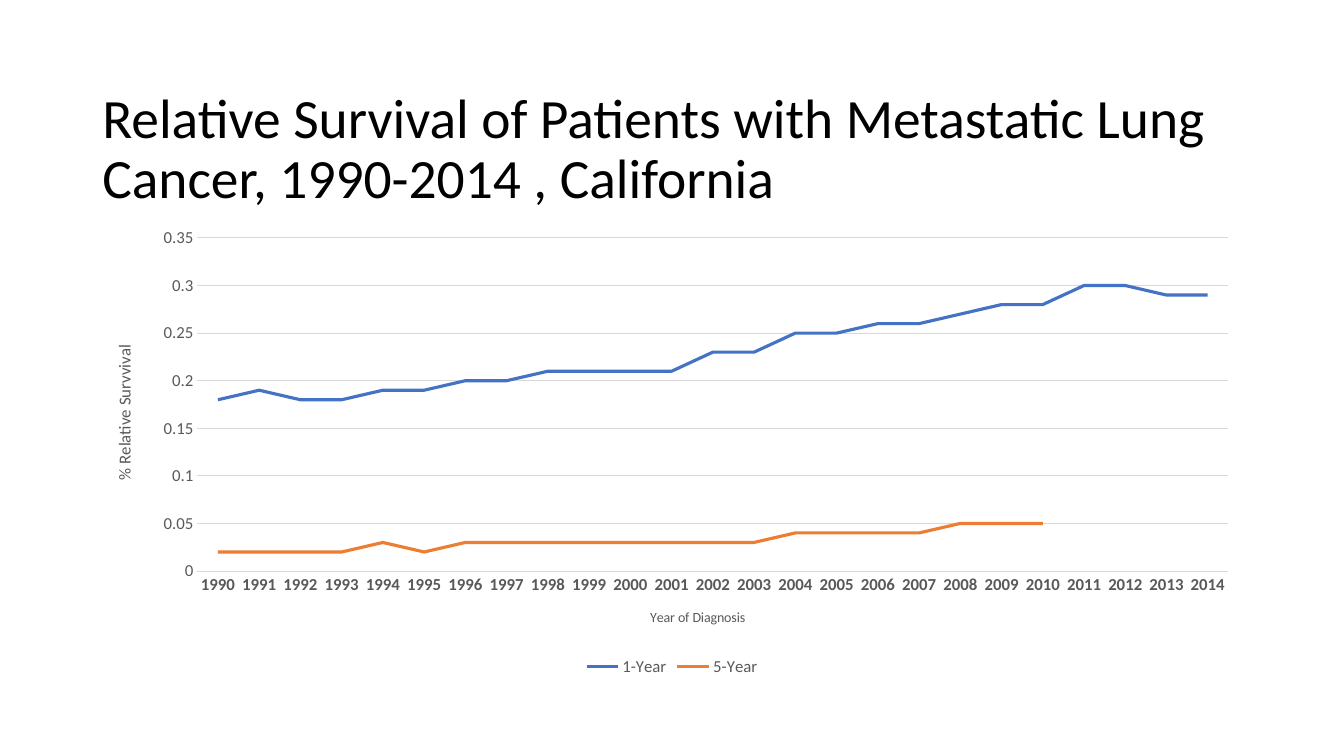
from lxml.etree import Element, SubElement
from pptx import Presentation
from pptx.chart.data import CategoryChartData
from pptx.dml.color import RGBColor
from pptx.enum.chart import XL_CHART_TYPE, XL_LEGEND_POSITION, XL_TICK_MARK
from pptx.enum.text import MSO_ANCHOR
from pptx.oxml.ns import qn
from pptx.util import Inches, Pt

COLORS = {
    "title": "000000",
    "label": "595959",
    "grid": "D9D9D9",
    "1-Year": "4472C4",
    "5-Year": "ED7D31",
}
YEARS = [str(year) for year in range(1990, 2015)]
SURVIVAL = {
    "1-Year": [0.18, 0.19, 0.18, 0.18, 0.19, 0.19, 0.2, 0.2, 0.21,
               0.21, 0.21, 0.21, 0.23, 0.23, 0.25, 0.25, 0.26, 0.26,
               0.27, 0.28, 0.28, 0.3, 0.3, 0.29, 0.29],
    "5-Year": [0.02, 0.02, 0.02, 0.02, 0.03, 0.02, 0.03, 0.03, 0.03,
               0.03, 0.03, 0.03, 0.03, 0.03, 0.04, 0.04, 0.04, 0.04,
               0.05, 0.05, 0.05] + [None] * 4,
}


def color(name):
    return RGBColor.from_string(COLORS[name])


def set_layout(parent, index, **percents):
    """Fix a chart part at percentages (x, y, w, h) of the chart area."""
    for old_layout in parent.findall(qn("c:layout")):
        parent.remove(old_layout)
    layout = Element(qn("c:layout"))
    manual = SubElement(layout, qn("c:manualLayout"))
    if "w" in percents:
        SubElement(manual, qn("c:layoutTarget")).set("val", "inner")
    for side in "xy":
        SubElement(manual, qn(f"c:{side}Mode")).set("val", "edge")
    for side, percent in percents.items():
        SubElement(manual, qn(f"c:{side}")).set("val", str(percent / 100))
    parent.insert(index, layout)


class SurvivalSlide:
    """Draws on one slide, with lengths in columns and rows of a grid."""

    font_name = "Calibri"
    columns = 160
    rows = 90

    def __init__(self, presentation):
        self.column = presentation.slide_width / self.columns
        self.row = presentation.slide_height / self.rows
        self.slide = presentation.slides.add_slide(presentation.slide_layouts[6])

    def box(self, left, top, width, height):
        return (int(left * self.column), int(top * self.row),
                int(width * self.column), int(height * self.row))

    def style_font(self, font, size, color_name="label", bold=False):
        font.name = self.font_name
        font.size = Pt(size)
        font.bold = bold
        font.color.rgb = color(color_name)

    def title(self, text, *place):
        frame = self.slide.shapes.add_textbox(*self.box(*place)).text_frame
        frame.word_wrap = True
        frame.vertical_anchor = MSO_ANCHOR.BOTTOM
        frame.margin_top = frame.margin_bottom = 0
        frame.text = text
        paragraph = frame.paragraphs[0]
        paragraph.line_spacing = 0.9
        self.style_font(paragraph.runs[0].font, 39.6, "title")

    def style_axis(self, axis, title, title_size, x, y, bold=False):
        axis.major_tick_mark = axis.minor_tick_mark = XL_TICK_MARK.NONE
        self.style_font(axis.tick_labels.font, 12, bold=bold)
        frame = axis.axis_title.text_frame
        frame.text = title
        self.style_font(frame.paragraphs[0].runs[0].font, title_size)
        set_layout(axis.axis_title._element, 1, x=x, y=y)

    def line_chart(self, categories, series_values, *place):
        data = CategoryChartData()
        data.categories = categories
        for name, values in series_values.items():
            data.add_series(name, values)
        chart = self.slide.shapes.add_chart(
            XL_CHART_TYPE.LINE, *self.box(*place), data).chart
        chart.has_title = False
        self.style_font(chart.font, 10, "title")
        chart.plots[0].vary_by_categories = False
        for series in chart.plots[0].series:
            series.smooth = False
            series.format.line.color.rgb = color(series.name)
            series.format.line.width = Pt(2.25)

        years, survival = chart.category_axis, chart.value_axis
        self.style_axis(years, "Year of Diagnosis", 10, 47.9, 83.8, bold=True)
        self.style_axis(survival, "% Relative Survvival", 12, 1.5, 26.75)
        survival.minimum_scale = 0
        survival.maximum_scale = 0.35
        survival.major_unit = 0.05
        survival.has_major_gridlines = True
        survival.format.line.fill.background()
        for line in (years.format.line, survival.major_gridlines.format.line):
            line.color.rgb = color("grid")
            line.width = Pt(0.75)

        chart.has_legend = True
        chart.legend.position = XL_LEGEND_POSITION.BOTTOM
        chart.legend.include_in_layout = False
        self.style_font(chart.legend.font, 12)
        plot_area = chart._chartSpace.chart.plotArea
        set_layout(plot_area, 0, x=9.05, y=4.25, w=88.95, h=72.1)


def main():
    presentation = Presentation()
    presentation.slide_width = Inches(13.33)
    presentation.slide_height = Inches(7.5)
    slide = SurvivalSlide(presentation)
    slide.title("Relative Survival of Patients with Metastatic Lung Cancer, "
                "1990-2014 , California", 11, 5, 138, 20)
    slide.line_chart(YEARS, SURVIVAL, 11, 26, 138, 55)
    presentation.save("out.pptx")


if __name__ == "__main__":
    main()
